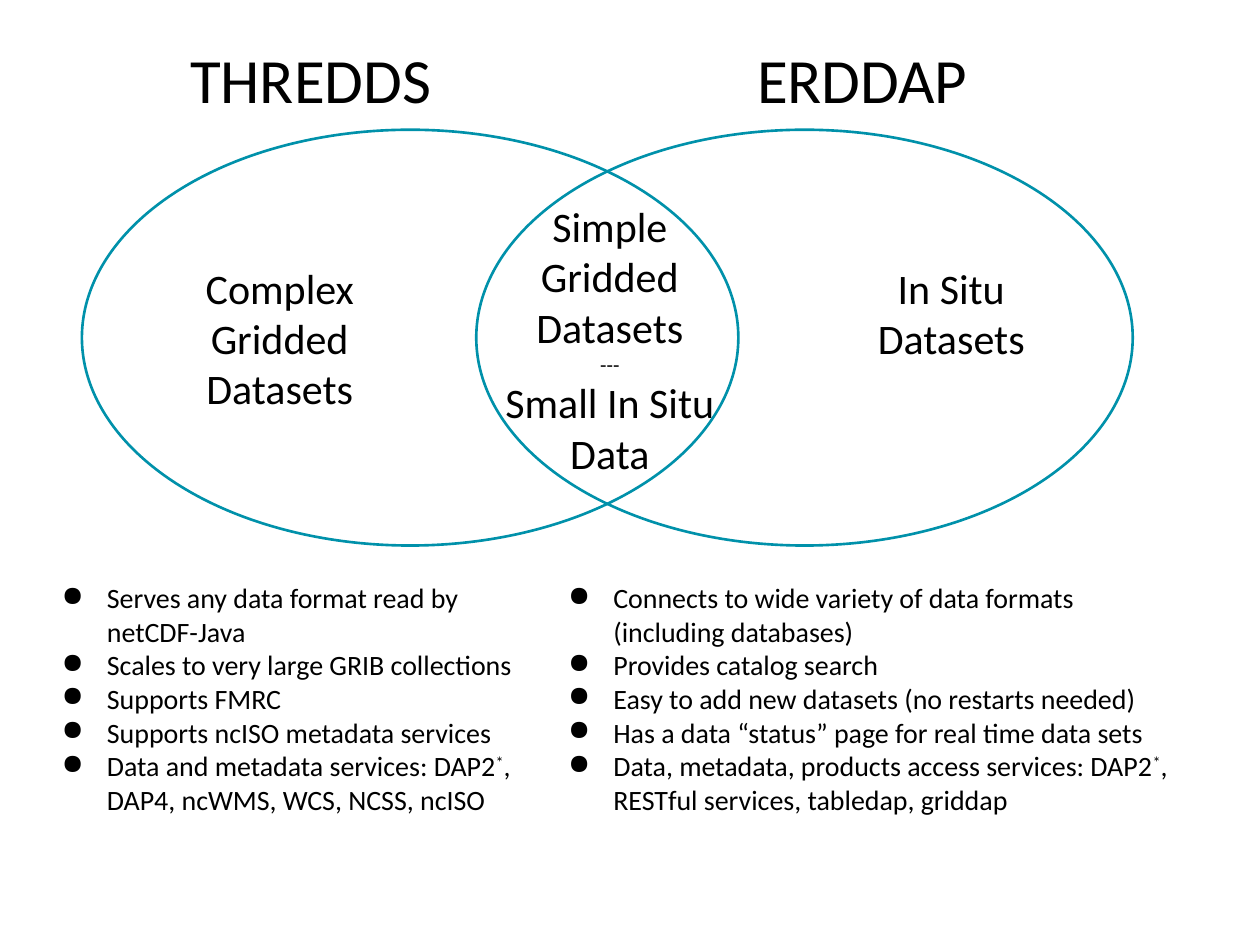
from dataclasses import dataclass

from lxml import etree
from pptx import Presentation
from pptx.dml.color import RGBColor
from pptx.enum.shapes import MSO_SHAPE as Shape
from pptx.enum.text import PP_ALIGN as Align
from pptx.oxml.ns import qn
from pptx.util import Inches, Pt


@dataclass(frozen=True)
class Theme:
    font: str = "Calibri"
    text: str = "000000"
    outline: str = "0091AA"
    title: int = 36
    label: int = 24
    separator: int = 12
    bullet: int = 16


theme = Theme()
presentation = Presentation()
presentation.slide_width = Inches(10)
presentation.slide_height = Inches(7.5)
slide = presentation.slides.add_slide(presentation.slide_layouts[6])


def add_text(left, top, width, height, lines, align=Align.LEFT, bulleted=False):
    """Add a text box; lines are (text, size), and * is set as superscript."""
    box = slide.shapes.add_textbox(*map(Inches, (left, top, width, height)))
    frame = box.text_frame
    frame.word_wrap = True
    frame.margin_left = frame.margin_right = Inches(0.1)
    frame.margin_top = frame.margin_bottom = Inches(0.1)
    for index, (text, size) in enumerate(lines):
        paragraph = frame.add_paragraph() if index else frame.paragraphs[0]
        paragraph.alignment = align
        if bulleted:
            add_bullet(paragraph)
        before, star, after = text.partition("*")
        for part in filter(None, (before, star, after)):
            run = paragraph.add_run()
            run.text = part
            if part == "*":
                run._r.get_or_add_rPr().set("baseline", "30000")
        paragraph.font.name = theme.font
        paragraph.font.size = Pt(size)
        paragraph.font.color.rgb = RGBColor.from_string(theme.text)


def add_bullet(paragraph):
    properties = paragraph._p.get_or_add_pPr()
    properties.set("marL", str(Inches(0.5)))
    properties.set("indent", str(Inches(-0.36)))
    color = etree.SubElement(properties, qn("a:buClr"))
    etree.SubElement(color, qn("a:srgbClr"), val=theme.text)
    etree.SubElement(properties, qn("a:buChar"), char="●")


# Titles
for left, title in ((1.41, "THREDDS"), (5.91, "ERDDAP")):
    add_text(left, 0.22, 2.29, 0.65, [(title, theme.title)])

# Overlapping ellipses
for left in (0.65, 3.78):
    ellipse = slide.shapes.add_shape(
        Shape.OVAL, Inches(left), Inches(1.03), Inches(5.21), Inches(3.3))
    ellipse.shadow.inherit = False
    ellipse.fill.background()
    ellipse.line.color.rgb = RGBColor.from_string(theme.outline)
    ellipse.line.width = Pt(1.5)

# Labels of the three regions
shared = [
    ("Simple Gridded Datasets", theme.label),
    ("---", theme.separator),
    ("Small In Situ Data", theme.label),
]
regions = [
    (3.85, 1.49, 2.26, shared),
    (1.23, 1.98, 1.29, [("Complex Gridded Datasets", theme.label)]),
    (6.56, 1.98, 1.29, [("In Situ Datasets", theme.label)]),
]
for left, top, height, lines in regions:
    add_text(left, top, 1.98, height, lines, align=Align.CENTER)

# Feature lists
thredds_features = [
    "Serves any data format read by netCDF-Java",
    "Scales to very large GRIB collections",
    "Supports FMRC",
    "Supports ncISO metadata services",
    "Data and metadata services: DAP2*, DAP4, ncWMS, WCS, NCSS, ncISO",
]
erddap_features = [
    "Connects to wide variety of data formats (including databases)",
    "Provides catalog search",
    "Easy to add new datasets (no restarts needed)",
    "Has a data “status” page for real time data sets",
    "Data, metadata, products access services: DAP2*, "
    "RESTful services, tabledap, griddap",
]
for left, width, height, features in (
    (0.25, 4.02, 2.26, thredds_features),
    (4.27, 5.17, 1.97, erddap_features),
):
    lines = [(feature, theme.bullet) for feature in features]
    add_text(left, 4.51, width, height, lines, bulleted=True)

presentation.save("out.pptx")
